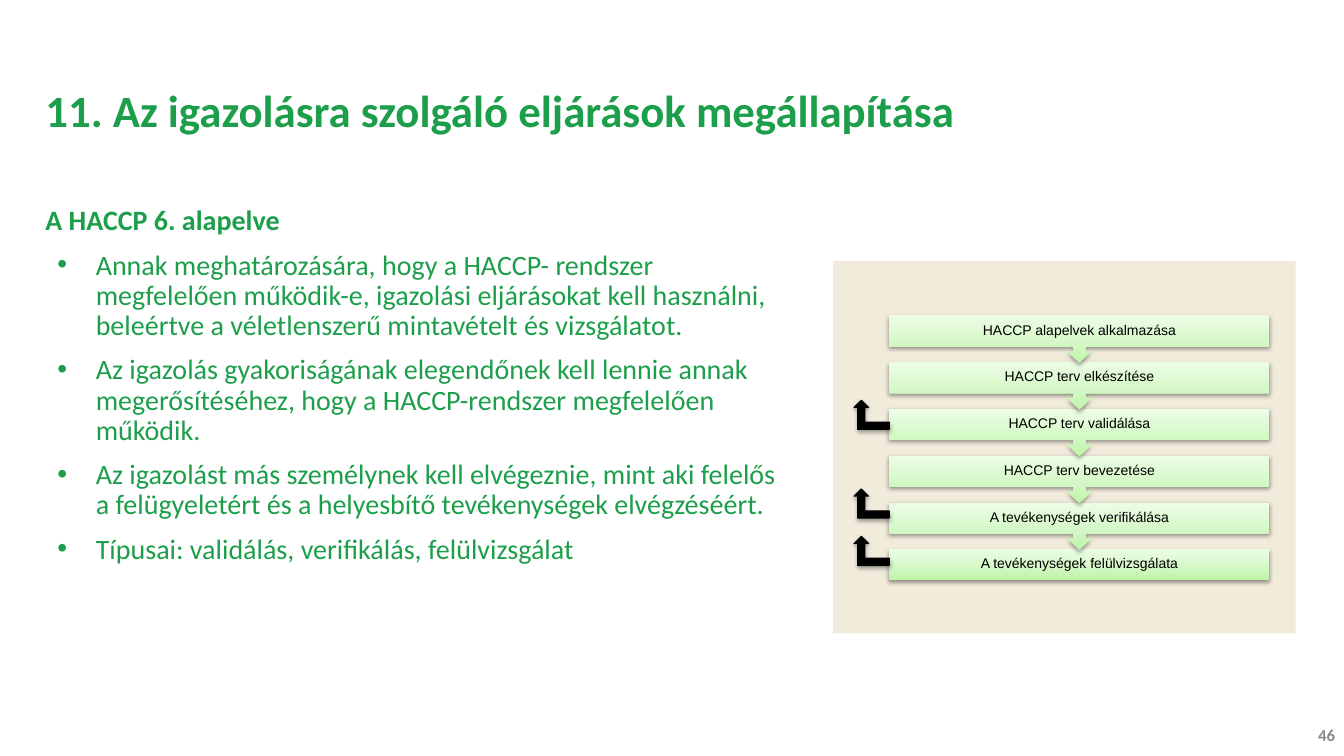
from lxml import etree
from pptx import Presentation
from pptx import util as u
from pptx.dml import color
from pptx.enum import shapes, text
from pptx.oxml import ns

GREEN = "1C9E4A"
TITLE = "11. Az igazolásra szolgáló eljárások megállapítása"
BODY = [
    "A HACCP 6. alapelve",
    "Annak meghatározására, hogy a HACCP- rendszer megfelelően működik-e, "
    "igazolási eljárásokat kell használni, beleértve a véletlenszerű "
    "mintavételt és vizsgálatot.",
    "Az igazolás gyakoriságának elegendőnek kell lennie annak "
    "megerősítéséhez, hogy a HACCP-rendszer megfelelően működik.",
    "Az igazolást más személynek kell elvégeznie, mint aki felelős a "
    "felügyeletért és a helyesbítő tevékenységek elvégzéséért.",
    "Típusai: validálás, verifikálás, felülvizsgálat",
]
STEPS = [
    "HACCP alapelvek alkalmazása",
    "HACCP terv elkészítése",
    "HACCP terv validálása",
    "HACCP terv bevezetése",
    "A tevékenységek verifikálása",
    "A tevékenységek felülvizsgálata",
]
STOPS = [(0, "BEF5A7"), (35, "D1F7C2"), (100, "EDFDE7")]
LEFT, TOP, WIDTH, HIGH, PITCH = 8.82, 3.13, 3.77, 0.3, 0.464
LOOPS = [3.97, 4.85, 5.32]


def rgb(code):
    return color.RGBColor.from_string(code)


def sub(node, tag, **attrs):
    return etree.SubElement(node, ns.qn(tag), attrs)


def place(item, x, y, w, h):
    item.left, item.top = u.Inches(x), u.Inches(y)
    item.width, item.height = u.Inches(w), u.Inches(h)


def style(para, size, code, face="Calibri", bold=False):
    for run in para.runs:
        font = run.font
        font.size, font.name, font.bold = u.Pt(size), face, bold
        font.color.rgb = rgb(code)


def shape(slide, kind, box, fill=None):
    item = slide.shapes.add_shape(kind, *map(u.Inches, box))
    if fill:
        item.fill.solid()
        item.fill.fore_color.rgb = rgb(fill)
    item.line.fill.background()
    item.shadow.inherit = False
    return item


def shade(item, alpha, dist):
    """Give the shape a soft black shadow straight below it."""
    effects = item._element.spPr.find(ns.qn("a:effectLst"))
    shadow = sub(effects, "a:outerShdw", blurRad=str(u.Pt(3.1)),
                 dist=str(u.Pt(dist)), dir="5400000", rotWithShape="0")
    tint = sub(shadow, "a:srgbClr", val="000000")
    sub(tint, "a:alpha", val=str(alpha * 1000))


def blend(item):
    """Fill with the green gradient, lightest at the top of the slide."""
    item.fill.gradient()
    item.fill.gradient_angle = 90
    grad = item._element.spPr.find(ns.qn("a:gradFill"))
    grad.set("rotWithShape", "0")
    stops = grad.find(ns.qn("a:gsLst"))
    for old in list(stops):
        stops.remove(old)
    for spot, code in STOPS:
        stop = sub(stops, "a:gs", pos=str(spot * 1000))
        sub(stop, "a:srgbClr", val=code)


def label(slide, words, box, align, pad=None):
    item = slide.shapes.add_textbox(*map(u.Inches, box))
    frame = item.text_frame
    frame.word_wrap = True
    frame.vertical_anchor = text.MSO_ANCHOR.MIDDLE
    if pad:
        frame.margin_left = frame.margin_right = u.Inches(pad)
        frame.margin_top = frame.margin_bottom = u.Inches(pad)
    frame.text = words
    para = frame.paragraphs[0]
    para.alignment = align
    return para


def step(slide, row, words):
    last = row == len(STEPS) - 1
    y = TOP + row * PITCH
    kind = shapes.MSO_SHAPE.RECTANGLE if last else shapes.MSO_SHAPE.UP_ARROW_CALLOUT
    item = shape(slide, kind, (LEFT, y, WIDTH, HIGH if last else 0.47))
    item.rotation = 0 if last else 180
    blend(item)
    shade(item, 38, 1.6)
    para = label(slide, words, (LEFT, y, WIDTH, HIGH), text.PP_ALIGN.CENTER, 0.08)
    para.line_spacing = 0.9
    style(para, 10, "000000", "Arial")


def loop(slide, y):
    """Add an arrow that turns from a step back up to the one before."""
    item = shape(slide, shapes.MSO_SHAPE.BENT_UP_ARROW, (8.47, y, 0.35, 0.29), "000000")
    item.line.color.rgb = rgb("000000")
    item.line.width = u.Pt(0.75)
    item._element.spPr.find(ns.qn("a:xfrm")).set("flipH", "1")
    shade(item, 35, 1.8)


def head(item):
    place(item, 0.35, 0.4, 12.64, 1.45)
    frame = item.text_frame
    frame.text = TITLE
    frame.auto_size = text.MSO_AUTO_SIZE.NONE
    frame.vertical_anchor = text.MSO_ANCHOR.MIDDLE
    para = frame.paragraphs[0]
    para.alignment = text.PP_ALIGN.LEFT
    para.line_spacing = 0.9
    style(para, 32, GREEN, bold=True)


def points(item):
    place(item, 0.35, 2, 7.45, 4.76)
    frame = item.text_frame
    frame.text = "\n".join(BODY)
    frame.auto_size = text.MSO_AUTO_SIZE.NONE
    frame.vertical_anchor = text.MSO_ANCHOR.TOP
    for row, para in enumerate(frame.paragraphs):
        props = para._p.get_or_add_pPr()
        if row:
            props.set("marL", str(u.Inches(0.5)))
            props.set("indent", str(u.Inches(-0.38)))
            sub(sub(props, "a:buClr"), "a:srgbClr", val=GREEN)
            sub(props, "a:buFont", typeface="Arial")
            sub(props, "a:buChar", char="•")
        else:
            props.set("marL", "0")
            props.set("indent", "0")
            sub(props, "a:buNone")
        para.line_spacing = 0.9
        para.space_before = u.Pt(10 if row else 0)
        style(para, 20, GREEN, bold=not row)


def main():
    deck = Presentation()
    deck.slide_width, deck.slide_height = u.Inches(13.33), u.Inches(7.5)
    slide = deck.slides.add_slide(deck.slide_layouts[1])
    head(slide.shapes.title)
    points(slide.placeholders[1])
    shape(slide, shapes.MSO_SHAPE.RECTANGLE, (8.26, 2.59, 4.59, 3.69), "F1EBDC")
    for row, words in reversed(list(enumerate(STEPS))):
        step(slide, row, words)
    for y in LOOPS:
        loop(slide, y)
    page = label(slide, "46", (12.78, 7.09, 0.56, 0.4), text.PP_ALIGN.RIGHT)
    style(page, 12, "898989", bold=True)
    deck.save("out.pptx")


if __name__ == "__main__":
    main()
